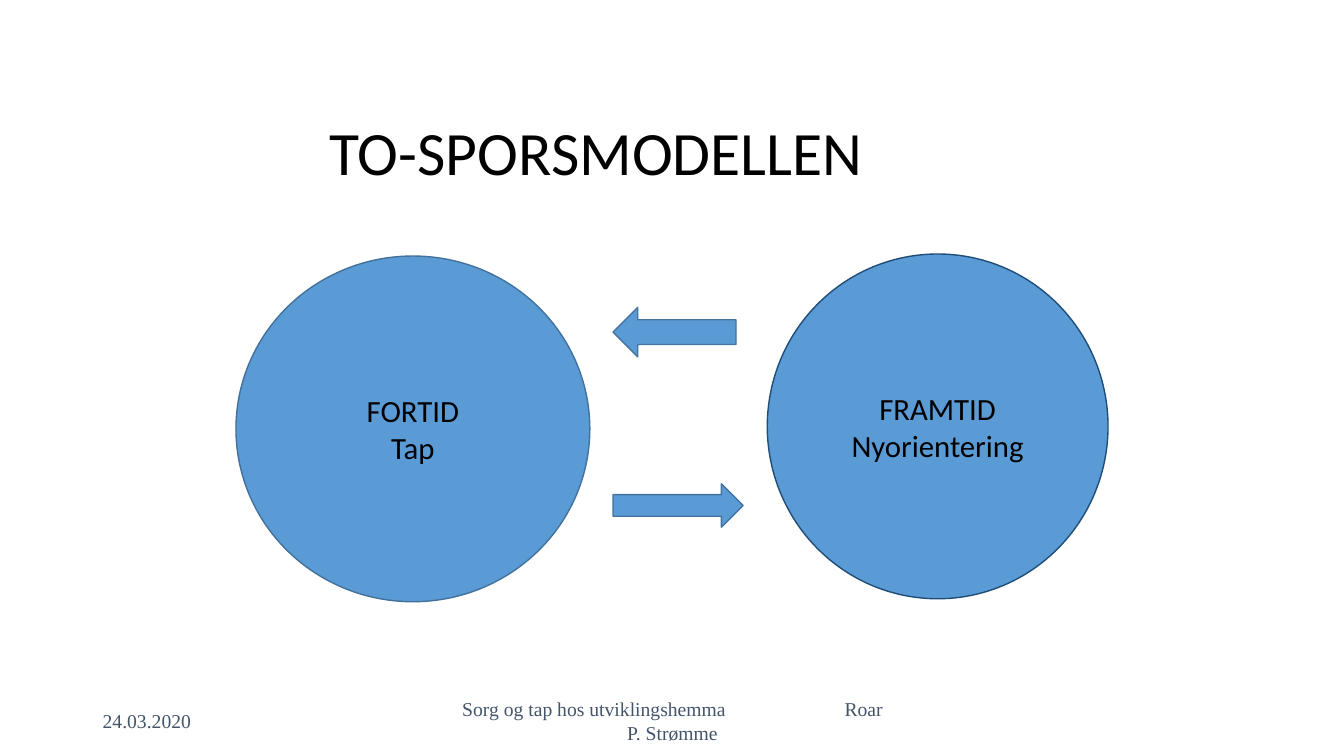
from pptx import Presentation
from pptx.dml.color import RGBColor
from pptx.enum.shapes import MSO_SHAPE
from pptx.enum.text import MSO_ANCHOR, MSO_AUTO_SIZE, PP_ALIGN
from pptx.util import Inches, Pt

ELLIPSE = MSO_SHAPE.OVAL
LEFT_ARROW = MSO_SHAPE.LEFT_ARROW
RIGHT_ARROW = MSO_SHAPE.RIGHT_ARROW
LEFT = PP_ALIGN.LEFT
CENTER = PP_ALIGN.CENTER
MIDDLE = MSO_ANCHOR.MIDDLE
NO_FIT = MSO_AUTO_SIZE.NONE
TITLE_ONLY = 5

COLORS = {
    "black": "000000",
    "footer": "44546A",
    "blue": "5B9BD5",
    "past_line": "41719C",
    "future_line": "1F4D78",
    "arrow_line": "43739E",
}


def rgb(name):
    return RGBColor.from_string(COLORS[name])


def write(tf, text, size=22, font="Calibri", color="black", align=LEFT, spacing=1.0, gap=0):
    tf.word_wrap = True
    tf.auto_size = NO_FIT
    tf.vertical_anchor = MIDDLE
    for i, line in enumerate(text.split("\n")):
        p = tf.add_paragraph() if i else tf.paragraphs[0]
        p.alignment = align
        p.line_spacing = spacing
        for j, part in enumerate(line.split("|")):
            for piece in ([" ", part] if j else [part]):
                r = p.add_run()
                r.text = piece
                r.font.size = Pt(size)
                r.font.name = font
                r.font.color.rgb = rgb(color)
                if piece == " ":
                    r._r.get_or_add_rPr().set("spc", str(gap * 100))


class ModelSlide:
    def __init__(self, prs):
        self.s = prs.slides.add_slide(prs.slide_layouts[TITLE_ONLY])
        self.fill = "blue"
        self.line_width = Pt(1)
        self.footer_style = {"size": 14, "font": "Times New Roman", "color": "footer"}

    def title(self, text, box):
        sp = self.s.shapes.title
        sp.left, sp.top, sp.width, sp.height = map(Inches, box)
        write(sp.text_frame, text, size=44, spacing=0.9)

    def footer(self, text, left, width, **style):
        sp = self.s.shapes.add_textbox(Inches(left), Inches(6.95), Inches(width), Inches(0.4))
        write(sp.text_frame, text, **self.footer_style, **style)

    def shape(self, kind, box, line):
        sp = self.s.shapes.add_shape(kind, *map(Inches, box))
        sp.shadow.inherit = False
        sp.fill.solid()
        sp.fill.fore_color.rgb = rgb(self.fill)
        sp.line.color.rgb = rgb(line)
        sp.line.width = self.line_width
        return sp

    def circle(self, text, box, line):
        sp = self.shape(ELLIPSE, box, line)
        write(sp.text_frame, text, align=CENTER)


def main():
    prs = Presentation()
    prs.slide_width = Inches(13.33)
    prs.slide_height = Inches(7.5)

    slide = ModelSlide(prs)
    slide.footer("24.03.2020", 0.92, 3)
    slide.footer("Sorg og tap hos utviklingshemma|Roar P. Strømme", 4.42, 4.5, align=CENTER, gap=81)
    slide.title("TO-SPORSMODELLEN", (3.17, 0.92, 8.5, 1.25))
    slide.circle("FORTID\nTap", (2.34, 2.54, 3.51, 3.43), "past_line")
    slide.circle("FRAMTID\nNyorientering", (7.61, 2.52, 3.38, 3.42), "future_line")
    slide.shape(LEFT_ARROW, (6.08, 3.05, 1.22, 0.49), "arrow_line")
    slide.shape(RIGHT_ARROW, (6.08, 4.8, 1.29, 0.43), "arrow_line")

    prs.save("out.pptx")


if __name__ == "__main__":
    main()
